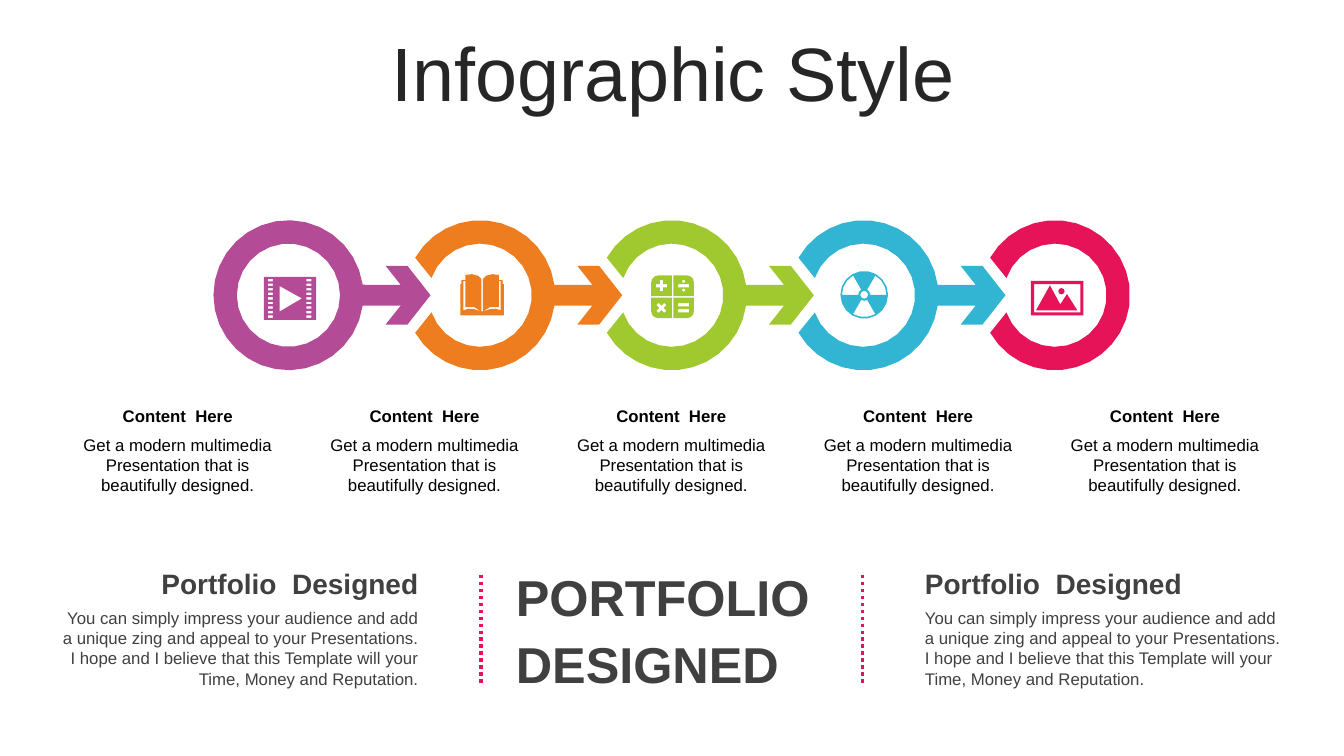
import math
from dataclasses import dataclass

import pptx
import pptx.dml.color
import pptx.enum.dml
import pptx.enum.shapes
import pptx.enum.text
import pptx.oxml
import pptx.oxml.ns
import pptx.util

Cm = pptx.util.Cm
Pt = pptx.util.Pt
Align = pptx.enum.text.PP_ALIGN
Anchor = pptx.enum.text.MSO_ANCHOR
Point = tuple[float, float]
Loop = list[Point]

MID_X, MID_Y, PITCH = 16.93, 7.44, 4.83
OUTER, INNER = 1.89, 1.3
SAG = 0.01
ARROW = [(2.83, -0.26), (2.45, -0.74), (3, -0.74), (3.58, 0),
         (3, 0.74), (2.45, 0.74), (2.83, 0.26)]
GREY, BLACK, PINK = "404040", "000000", "E61358"


@dataclass
class Step:
    color: str
    icon: list[Loop]


@dataclass
class Label:
    text: str
    left: float
    top: float
    width: float
    height: float
    size: int
    color: str = GREY
    bold: bool = False
    align: Align = Align.LEFT
    anchor: Anchor = Anchor.TOP
    pace: float = 1.0


def paint(code: str) -> pptx.dml.color.RGBColor:
    return pptx.dml.color.RGBColor.from_string(code)


def arc(radius: float, start: float, end: float, x: float = 0, y: float = 0) -> Loop:
    stride = min(45, math.degrees(2 * math.acos(1 - SAG / radius)))
    count = math.ceil(abs(end - start) / stride)
    turns = [math.radians(start + (end - start) * i / count) for i in range(count + 1)]
    return [(x + radius * math.cos(t), y + radius * math.sin(t)) for t in turns]


def disc(radius: float, x: float = 0, y: float = 0) -> Loop:
    return arc(radius, 0, 360, x, y)[:-1]


def box(left: float, top: float, width: float, height: float) -> Loop:
    right, base = left + width, top + height
    return [(left, top), (right, top), (right, base), (left, base)]


def flip(loop: Loop, across: int, down: int) -> Loop:
    return [(x * across, y * down) for x, y in loop]


def shift(loops: list[Loop], right: float, down: float) -> list[Loop]:
    return [[(x + right, y + down) for x, y in loop] for loop in loops]


def cross(x: float, y: float, turn: float) -> Loop:
    reach, half = 0.14, 0.04
    arm = [(half, -half), (reach, -half), (reach, half)]
    loop = []
    for quarter in range(4):
        angle = math.radians(turn + 90 * quarter)
        cos, sin = math.cos(angle), math.sin(angle)
        loop += [(x + a * cos - b * sin, y + a * sin + b * cos) for a, b in arm]
    return loop


def film() -> list[Loop]:
    holes = [box(x, -0.41 + 0.92 * row / 8, 0.13, 0.06)
             for x in (-0.52, 0.45) for row in range(9)]
    play = [(-0.22, -0.23), (-0.22, 0.41), (0.34, 0.08)]
    return [box(-0.62, -0.46, 1.32, 1.08), play] + holes


def book() -> list[Loop]:
    cover = [(0.02, -0.41), (0.1, -0.49), (0.26, -0.53), (0.42, -0.51), (0.42, -0.38),
             (0.52, -0.38), (0.52, -0.28), (0.55, -0.28), (0.55, 0.51), (0, 0.51),
             (0, 0.41), (0.02, 0.41)]
    gap = [(0.42, -0.36), (0.47, -0.36), (0.47, 0.38), (0.34, 0.34), (0.2, 0.35),
           (0.02, 0.41), (0.2, 0.3), (0.42, 0.3)]
    return shift([flip(loop, side, 1) for side in (1, -1) for loop in (cover, gap)],
                 0.05, 0)


def keypad() -> list[Loop]:
    key = [(0.02, 0.02), (0.54, 0.02)] + arc(0.18, 0, 90, 0.36, 0.36) + [(0.02, 0.54)]
    keys = [flip(key, x, y) for x in (1, -1) for y in (1, -1)]
    bars = [box(0.14, y, 0.28, 0.08) for y in (-0.32, 0.16, 0.31)]
    dots = [disc(0.04, 0.28, y) for y in (-0.39, -0.17)]
    signs = [cross(-0.28, -0.28, 0), cross(-0.28, 0.28, 45)]
    return shift(keys + bars + dots + signs, 0.02, 0.04)


def atom() -> list[Loop]:
    gaps = [arc(0.56, a, a + 60) + arc(0.15, a + 60, a) for a in (60, 180, 300)]
    return shift([disc(0.6), disc(0.1)] + gaps, 0.02, -0.01)


def photo() -> list[Loop]:
    hills = [(-0.13, -0.25), (0.13, 0.23), (0.3, -0.03), (0.56, 0.38), (-0.48, 0.38)]
    return [box(-0.61, -0.36, 1.32, 0.87), box(-0.53, -0.28, 1.17, 0.71),
            hills, disc(0.08, 0.16, -0.1)]


def ring(first: bool, last: bool) -> list[Loop]:
    edge = 180 if first else 150
    tail = [] if last else ARROW
    outer = arc(OUTER, -edge, -8) + tail + arc(OUTER, 8, edge)
    if first:
        return [outer, disc(INNER)]
    return [outer + arc(INNER, 160.5, -160.5)]


def draw(slide: pptx.slide.Slide, loops: list[Loop], color: str) -> None:
    paths = [[(Cm(x), Cm(y)) for x, y in loop] for loop in loops]
    pen = slide.shapes.build_freeform(*paths[0][0], scale=1.0)
    pen.add_line_segments(paths[0][1:], close=True)
    for path in paths[1:]:
        pen.move_to(*path[0])
        pen.add_line_segments(path[1:], close=True)
    shape = pen.convert_to_shape()
    shape.shadow.inherit = False
    shape.fill.solid()
    shape.fill.fore_color.rgb = paint(color)
    shape.line.fill.background()


def style(shape: pptx.shapes.base.BaseShape, label: Label) -> None:
    shape.left, shape.top = Cm(label.left), Cm(label.top)
    shape.width, shape.height = Cm(label.width), Cm(label.height)
    frame = shape.text_frame
    frame.text = label.text
    frame.word_wrap = True
    frame.auto_size = pptx.enum.text.MSO_AUTO_SIZE.NONE
    frame.vertical_anchor = label.anchor
    para = frame.paragraphs[0]
    para.alignment = label.align
    para.line_spacing = label.pace
    font = para.runs[0].font
    font.name, font.size, font.bold = "Arial", Pt(label.size), label.bold
    font.color.rgb = paint(label.color)


def rule(slide: pptx.slide.Slide, x: float) -> None:
    line = slide.shapes.add_connector(
        pptx.enum.shapes.MSO_CONNECTOR.STRAIGHT, Cm(x), Cm(14.48), Cm(x), Cm(17.2))
    line.line.color.rgb = paint(PINK)
    line.line.width = Pt(2.5)
    line.line.dash_style = pptx.enum.dml.MSO_LINE.ROUND_DOT
    props = line._element.spPr
    props.append(pptx.oxml.parse_xml(
        "<a:effectLst %s/>" % pptx.oxml.ns.nsdecls("a")))


def main() -> None:
    deck = pptx.Presentation()
    deck.slide_width, deck.slide_height = Cm(33.87), Cm(19.05)
    slide = deck.slides.add_slide(deck.slide_layouts[5])
    style(slide.shapes.title, Label("Infographic Style", 0.89, 0.94, 32.16, 2.01, 54,
                                    "262626", False, Align.CENTER, Anchor.MIDDLE, 0.9))

    steps = [Step("B44B97", film()), Step("ED7D1F", book()), Step("A0C82F", keypad()),
             Step("32B5D3", atom()), Step(PINK, photo())]
    labels = [Label("PORTFOLIO DESIGNED", 12.75, 14, 8.36, 3.51, 36,
                    bold=True, align=Align.JUSTIFY, pace=1.1)]
    for i, step in enumerate(steps):
        x = MID_X + (i - 2) * PITCH
        for loops in (ring(i == 0, i == len(steps) - 1), step.icon):
            draw(slide, shift(loops, x, MID_Y), step.color)
        left = 1.7 + 6.22 * i
        labels += [
            Label("Content  Here", left, 10.11, 5.56, 0.76, 12, BLACK, True,
                  Align.CENTER, Anchor.MIDDLE),
            Label("Get a modern multimedia Presentation that is beautifully designed.",
                  left, 10.82, 5.56, 1.8, 12, BLACK, align=Align.CENTER)]

    pitch = ("You can simply impress your audience and add a unique zing and appeal to "
             "your Presentations. I hope and I believe that this Template will your "
             "Time, Money and Reputation.")
    for left, align in ((1.3, Align.RIGHT), (23.06, Align.LEFT)):
        labels += [
            Label("Portfolio  Designed", left, 14.17, 9.5, 0.99, 20, GREY, True,
                  align, Anchor.MIDDLE, 1.1),
            Label(pitch, left, 15.19, 9.5, 2.31, 12, align=align)]

    for label in labels:
        style(slide.shapes.add_textbox(0, 0, 0, 0), label)
    for x in (12.12, 21.74):
        rule(slide, x)
    deck.save("out.pptx")


if __name__ == "__main__":
    main()
